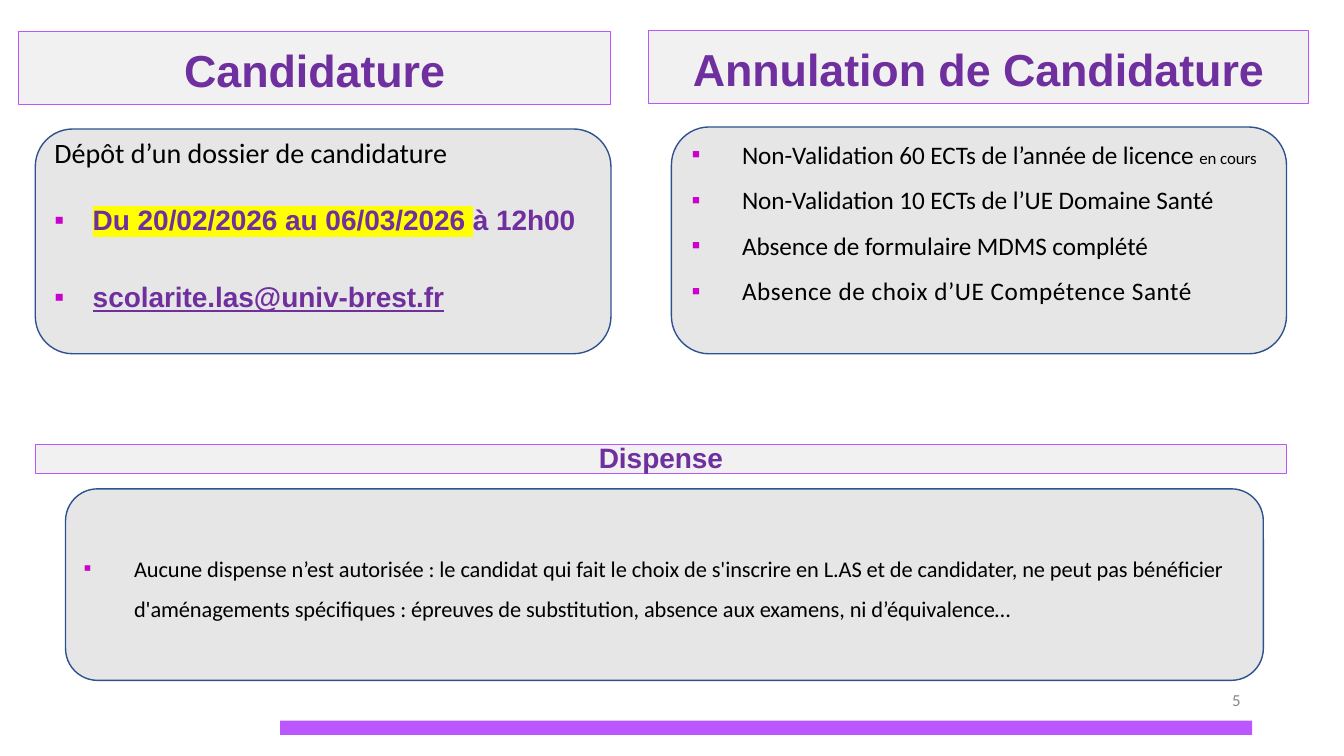
from dataclasses import dataclass

from lxml.etree import SubElement
from pptx import Presentation
from pptx.dml.color import RGBColor
from pptx.enum.shapes import MSO_SHAPE as Shape
from pptx.enum.text import MSO_ANCHOR as Anchor, PP_ALIGN as Align
from pptx.oxml import parse_xml
from pptx.oxml.ns import nsdecls, qn
from pptx.util import Inches, Pt


@dataclass(frozen=True)
class Theme:
    accent: str = "BB57FF"
    heading: str = "6F2F9F"
    banner: str = "F1F1F1"
    card: str = "E7E6E6"
    card_line: str = "2E528F"
    bullet: str = "CC00CC"
    marker: str = "FFFF00"
    ink: str = "000000"
    muted: str = "888888"
    heading_font: str = "Arial"
    body_font: str = "Calibri"
    title_size: float = 32
    large_size: float = 20
    list_size: float = 18
    detail_size: float = 16
    small_size: float = 12


THEME = Theme()


def color(code):
    return RGBColor.from_string(code)


def add_span(para, text, size=THEME.list_size, font=THEME.body_font, ink=THEME.ink,
             bold=False, underline=False, marker=None, tracking=0):
    span = para.add_run()
    span.text = text
    span.font.size = Pt(size)
    span.font.bold = bold
    span.font.underline = underline
    span.font.color.rgb = color(ink)
    span.font.name = font
    props = span.font._element
    if tracking:
        props.set("spc", str(round(tracking * 100)))
    if marker:
        highlight = parse_xml(f'<a:highlight {nsdecls("a")}><a:srgbClr val="{marker}"/></a:highlight>')
        props.find(qn("a:solidFill")).addnext(highlight)


class SlideBuilder:
    def __init__(self, theme, page):
        self.theme = theme
        self.page = page

    def shape(self, kind, area, fill, line=None, weight=1):
        shape = self.page.shapes.add_shape(kind, *map(Inches, area))
        shape.shadow.inherit = False
        shape.fill.solid()
        shape.fill.fore_color.rgb = color(fill)
        if line:
            shape.line.color.rgb = color(line)
            shape.line.width = Pt(weight)
        else:
            shape.line.fill.background()
        return shape

    def frame(self, box, top_inset):
        frame = box.text_frame
        frame.word_wrap = True
        frame.vertical_anchor = Anchor.TOP
        frame.margin_left = frame.margin_right = frame.margin_bottom = 0
        frame.margin_top = Inches(top_inset)
        return frame

    def banner(self, area, text, size, top_inset=0, line_spacing=None):
        box = self.shape(Shape.RECTANGLE, area, self.theme.banner, self.theme.accent, 0.75)
        para = self.frame(box, top_inset).paragraphs[0]
        para.alignment = Align.CENTER
        para.line_spacing = line_spacing
        add_span(para, text, size=size, font=self.theme.heading_font,
                 ink=self.theme.heading, bold=True, tracking=-0.05)

    def card(self, area):
        self.shape(Shape.ROUNDED_RECTANGLE, area, self.theme.card, self.theme.card_line)

    def text(self, area, paragraphs, top_inset=0.01):
        box = self.page.shapes.add_textbox(*map(Inches, area))
        frame = self.frame(box, top_inset)
        for index, (spans, layout) in enumerate(paragraphs):
            para = frame.paragraphs[0] if index == 0 else frame.add_paragraph()
            self.layout(para, **layout)
            for text, style in spans:
                add_span(para, text, **style)

    def layout(self, para, indent=0, before=0, line_spacing=None):
        if indent:
            self.bullet(para, indent)
        para.space_before = Pt(before)
        para.line_spacing = line_spacing

    def bullet(self, para, indent):
        props = para._p.get_or_add_pPr()
        props.set("marL", str(Inches(indent)))
        props.set("indent", str(-Inches(indent)))
        SubElement(SubElement(props, qn("a:buClr")), qn("a:srgbClr")).set("val", self.theme.bullet)
        SubElement(props, qn("a:buFont")).set("typeface", self.theme.heading_font)
        SubElement(props, qn("a:buChar")).set("char", "▪")


def build_slide(page):
    slide = SlideBuilder(THEME, page)
    slide.shape(Shape.RECTANGLE, (2.78, 7.15, 9.64, 0.14), THEME.accent)

    slide.banner((0.18, 0.31, 5.88, 0.73), "Candidature", THEME.title_size, top_inset=0.11)
    slide.banner((6.43, 0.3, 6.55, 0.73), "Annulation de Candidature", THEME.title_size, top_inset=0.11)
    slide.banner((0.35, 4.41, 12.41, 0.29), "Dispense", THEME.large_size, line_spacing=Pt(20.8))

    for area in ((0.35, 1.28, 5.71, 2.23), (6.66, 1.26, 6.1, 2.25), (0.65, 4.85, 11.88, 1.9)):
        slide.card(area)

    plain = dict(size=THEME.large_size)
    strong = dict(size=THEME.large_size, font=THEME.heading_font, ink=THEME.heading,
                  bold=True, tracking=-0.05)
    slide.text((0.54, 1.33, 5.4, 1.77), [
        ([("Dépôt d’un dossier de candidature", plain)], {}),
        ([("Du 20/02/2026 au 06/03/2026 ", dict(strong, marker=THEME.marker)),
          ("à 12h00", strong)], dict(indent=0.38, before=24.5)),
        ([("scolarite.las@univ-brest.fr", dict(strong, underline=True))],
         dict(indent=0.38, before=31)),
    ])

    item = dict(size=THEME.list_size, tracking=-0.05)
    reasons = [
        [("Non-Validation 60 ECTs de l’année de licence ", item),
         ("en cours", dict(item, size=THEME.small_size))],
        [("Non-Validation 10 ECTs de l’UE Domaine Santé", item)],
        [("Absence de formulaire MDMS complété", item)],
        [("Absence de choix d’UE Compétence Santé", dict(item, tracking=0.4))],
    ]
    slide.text((6.86, 1.2, 5.75, 1.79),
               [(spans, dict(indent=0.5, before=10.8 if index else 0))
                for index, spans in enumerate(reasons)],
               top_inset=0.18)

    slide.text((0.83, 5.35, 11.52, 0.83), [
        ([("Aucune dispense n’est autorisée : le candidat qui fait le choix de s'inscrire en L.AS "
           "et de candidater, ne peut pas bénéficier d'aménagements spécifiques : épreuves de "
           "substitution, absence aux examens, ni d’équivalence…",
           dict(size=THEME.detail_size, tracking=-0.05))],
         dict(indent=0.5, line_spacing=1.5)),
    ], top_inset=0.02)

    slide.text((12.22, 6.83, 0.2, 0.23),
               [([("5", dict(size=THEME.small_size, ink=THEME.muted))], {})])


def main():
    deck = Presentation()
    deck.slide_width = Inches(13.33)
    deck.slide_height = Inches(7.5)
    build_slide(deck.slides.add_slide(deck.slide_layouts[6]))
    deck.save("out.pptx")


if __name__ == "__main__":
    main()
